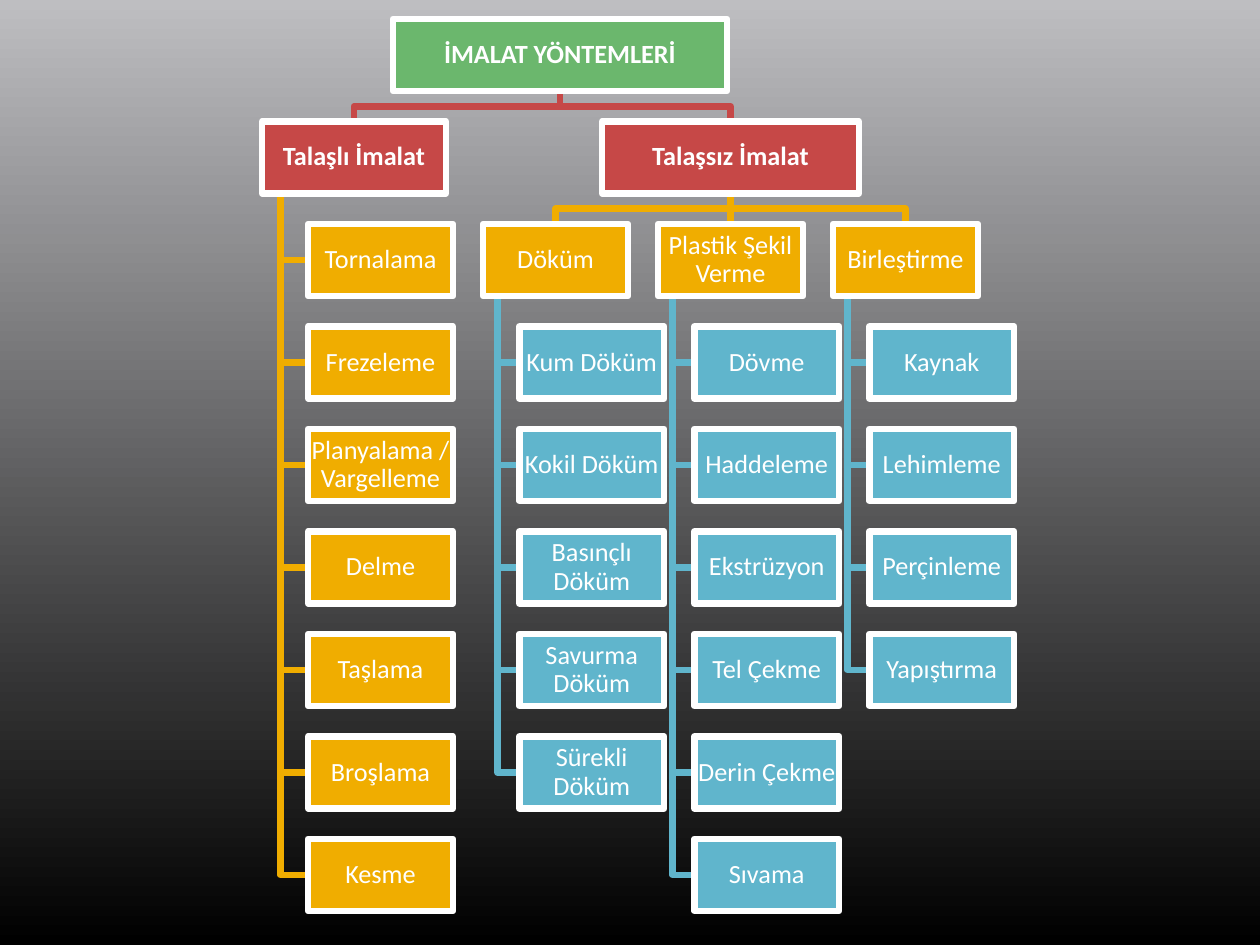
from pptx import Presentation, util as u
from pptx.dml.color import RGBColor
from pptx.enum import shapes, text
from lxml import etree

COLORS = {"root": "6BB76D", "branch": "C64847", "group": "F0AD00", "leaf": "60B5CC",
          "white": "FFFFFF", "top": "BEBEC1", "bottom": "000000"}

ROOT = ("İMALAT YÖNTEMLERİ", 393, 334)  # label, left, width
MACHINING = ("Talaşlı İmalat", 262, 184)
CHIPLESS = ("Talaşsız İmalat", 602, 257)
MACHINING_METHODS = ["Tornalama", "Frezeleme", "Planyalama / Vargelleme", "Delme",
                     "Taşlama", "Broşlama", "Kesme"]
CHIPLESS_GROUPS = [
    ("Döküm", ["Kum Döküm", "Kokil Döküm", "Basınçlı Döküm", "Savurma Döküm",
               "Sürekli Döküm"]),
    ("Plastik Şekil Verme", ["Dövme", "Haddeleme", "Ekstrüzyon", "Tel Çekme",
                             "Derin Çekme", "Sıvama"]),
    ("Birleştirme", ["Kaynak", "Lehimleme", "Perçinleme", "Yapıştırma"]),
]

SLIDE_W, SLIDE_H = 1260, 945
TOP, ROW_PITCH, BOX_H, BOX_W = 19, 102.5, 72, 145
GROUP_LEFT, GROUP_PITCH = 483, 175
LINE_WIDTH = u.Pt(3.78)


def px(value):
    return u.Emu(round(value * 914400 / 126))


def rgb(name):
    return RGBColor.from_string(COLORS[name])


deck = Presentation()
deck.slide_width, deck.slide_height = px(SLIDE_W), px(SLIDE_H)
page = deck.slides.add_slide(deck.slide_layouts[6])


def add_rectangle(left, top, width, height):
    box = page.shapes.add_shape(shapes.MSO_SHAPE.RECTANGLE,
                                px(left), px(top), px(width), px(height))
    box.shadow.inherit = False
    return box


background = add_rectangle(0, 0, SLIDE_W, SLIDE_H)
background.line.fill.background()
background.fill.gradient()
background.fill.gradient_angle = 90
for stop, name in zip(background.fill.gradient_stops, ("bottom", "top")):
    stop.color.rgb = rgb(name)


def add_box(label, left, width, row, kind):
    box = add_rectangle(left, TOP + row * ROW_PITCH, width, BOX_H)
    box.fill.solid()
    box.fill.fore_color.rgb = rgb(kind)
    box.line.color.rgb = rgb("white")
    box.line.width = LINE_WIDTH
    frame = box.text_frame
    frame.word_wrap = True
    frame.vertical_anchor = text.MSO_ANCHOR.MIDDLE
    frame.margin_left = frame.margin_right = frame.margin_top = frame.margin_bottom = px(1)
    para = frame.paragraphs[0]
    para.text = label
    para.alignment = text.PP_ALIGN.CENTER
    para.line_spacing = 0.9
    para.font.name = "Calibri"
    para.font.size = u.Pt(15)
    para.font.bold = kind in ("root", "branch")
    para.font.color.rgb = rgb("white")
    return box


def finish_line(line, kind):
    """Style a line and place it behind the boxes."""
    line.line.color.rgb = rgb(kind)
    line.line.width = LINE_WIDTH
    background._element.addnext(line._element)


def add_path(points, kind):
    builder = page.shapes.build_freeform(*points[0])
    builder.add_line_segments(points[1:], close=False)
    path = builder.convert_to_shape()
    path.fill.background()
    path.shadow.inherit = False
    finish_line(path, kind)


def link_down(parent, child, kind):
    """Join a parent's bottom centre to a child's top centre."""
    start_x = parent.left + parent.width // 2
    end_x = child.left + child.width // 2
    start_y, end_y = parent.top + parent.height, child.top
    if abs(start_x - end_x) < px(1):
        line = page.shapes.add_connector(shapes.MSO_CONNECTOR.STRAIGHT,
                                         start_x, start_y, end_x, end_y)
        line.begin_connect(parent, 2)
        line.end_connect(child, 0)
        etree.SubElement(line._element.spPr,
                         "{http://schemas.openxmlformats.org/drawingml/2006/main}effectLst")
        finish_line(line, kind)
    else:
        middle = (start_y + end_y) // 2
        add_path([(start_x, start_y), (start_x, middle), (end_x, middle), (end_x, end_y)], kind)


def hang(parent, left, width, row, labels, kind):
    """Stack boxes below a parent, indented by a quarter of its width."""
    stem = px(left + width * 0.1)
    for offset, label in enumerate(labels, 1):
        child = add_box(label, left + width / 4, BOX_W, row + offset, kind)
        middle = child.top + child.height // 2
        add_path([(stem, parent.top + parent.height), (stem, middle), (child.left, middle)], kind)


root = add_box(*ROOT, 0, "root")
machining = add_box(*MACHINING, 1, "branch")
chipless = add_box(*CHIPLESS, 1, "branch")
for branch in (machining, chipless):
    link_down(root, branch, "branch")

hang(machining, *MACHINING[1:], 1, MACHINING_METHODS, "group")
for column, (label, methods) in enumerate(CHIPLESS_GROUPS):
    left = GROUP_LEFT + column * GROUP_PITCH
    group = add_box(label, left, BOX_W, 2, "group")
    link_down(chipless, group, "group")
    hang(group, left, BOX_W, 2, methods, "leaf")

deck.save("out.pptx")
